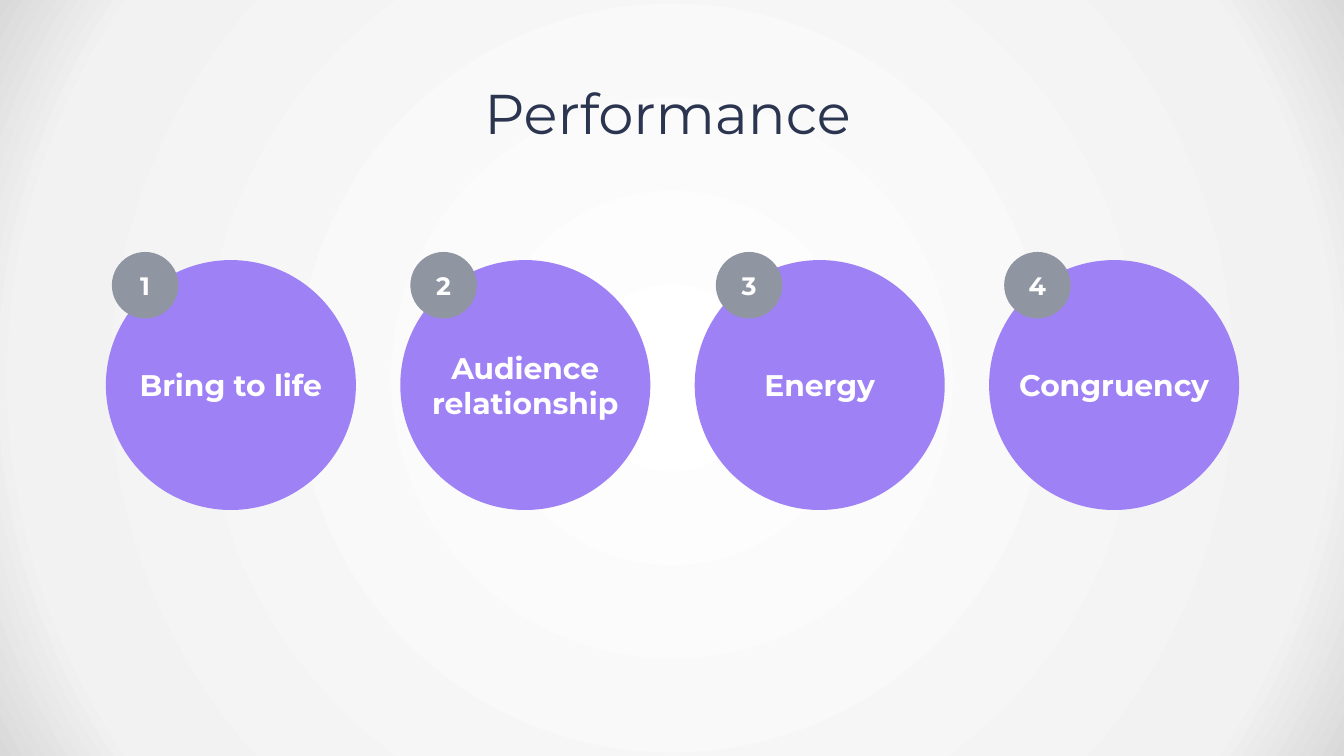
from dataclasses import dataclass

import pptx
import pptx.dml.color
import pptx.enum.shapes
import pptx.enum.text
import pptx.oxml
import pptx.oxml.ns
import pptx.util
from pptx.util import Inches

FONT = "Montserrat"
WHITE = "FFFFFF"
NAVY = "2B354F"
PURPLE = "9F81F6"
GREY = "9095A2"

SLIDE_WIDTH, SLIDE_HEIGHT = 13.33, 7.5
TOPIC_LEFT, TOPIC_TOP, TOPIC_SIZE, TOPIC_STEP = 1.05, 2.58, 2.48, 2.92
BADGE_TOP, BADGE_SIZE = 2.5, 0.66
BACKDROP_STOPS = [(0, WHITE), (85, "F2F2F2"), (100, "D9D9D9")]


@dataclass
class Topic:
    label: str
    badge_left: float


TOPICS = [
    Topic("Bring to life", 1.11),
    Topic("Audience\nrelationship", 4.07),
    Topic("Energy", 7.1),
    Topic("Congruency", 9.96),
]


def color(value: str) -> pptx.dml.color.RGBColor:
    return pptx.dml.color.RGBColor.from_string(value)


def write_text(shape, text: str, size: float, text_color: str, bold: bool,
               wrap: bool, margins: tuple = (0, 0, 0, 0)) -> None:
    frame = shape.text_frame
    frame.text = text
    frame.word_wrap = wrap
    frame.vertical_anchor = pptx.enum.text.MSO_ANCHOR.MIDDLE
    frame.margin_left, frame.margin_top, frame.margin_right, frame.margin_bottom = (
        Inches(margin) for margin in margins
    )
    for paragraph in frame.paragraphs:
        paragraph.alignment = pptx.enum.text.PP_ALIGN.CENTER
        for run in paragraph.runs:
            run.font.name = FONT
            run.font.size = pptx.util.Pt(size)
            run.font.bold = bold
            run.font.color.rgb = color(text_color)


def add_backdrop(slide) -> None:
    shape = slide.shapes.add_shape(
        pptx.enum.shapes.MSO_SHAPE.RECTANGLE,
        0, 0, Inches(SLIDE_WIDTH), Inches(SLIDE_HEIGHT),
    )
    shape.shadow.inherit = False
    shape.line.fill.background()
    shape.fill.gradient()
    stops = "".join(
        f'<a:gs pos="{position * 1000}"><a:srgbClr val="{value}"/></a:gs>'
        for position, value in BACKDROP_STOPS
    )
    radial = pptx.oxml.parse_xml(
        f'<a:gradFill {pptx.oxml.ns.nsdecls("a")} rotWithShape="1">'
        f'<a:gsLst>{stops}</a:gsLst><a:path path="circle">'
        '<a:fillToRect l="50000" t="50000" r="50000" b="50000"/>'
        '</a:path></a:gradFill>'
    )
    properties = shape.element.spPr
    properties.replace(properties.find(pptx.oxml.ns.qn("a:gradFill")), radial)


def add_title(slide, text: str) -> None:
    shape = slide.shapes.add_textbox(0, Inches(0.74), Inches(SLIDE_WIDTH), Inches(0.83))
    write_text(shape, text, 40, NAVY, False, True, (0, 0.04, 0.09, 0.04))
    shape.text_frame.paragraphs[0].line_spacing = 0.9


def add_circle(slide, left: float, top: float, diameter: float, fill: str,
               text: str, size: float, wrap: bool) -> None:
    shape = slide.shapes.add_shape(
        pptx.enum.shapes.MSO_SHAPE.OVAL,
        Inches(left), Inches(top), Inches(diameter), Inches(diameter),
    )
    shape.shadow.inherit = False
    shape.fill.solid()
    shape.fill.fore_color.rgb = color(fill)
    shape.line.fill.background()
    write_text(shape, text, size, WHITE, True, wrap)


def main() -> None:
    presentation = pptx.Presentation()
    presentation.slide_width = Inches(SLIDE_WIDTH)
    presentation.slide_height = Inches(SLIDE_HEIGHT)
    slide = presentation.slides.add_slide(presentation.slide_layouts[6])
    add_backdrop(slide)
    add_title(slide, "Performance")
    for index, topic in enumerate(TOPICS):
        add_circle(slide, TOPIC_LEFT + index * TOPIC_STEP, TOPIC_TOP, TOPIC_SIZE,
                   PURPLE, topic.label, 21.3, False)
    for number, topic in enumerate(TOPICS, start=1):
        add_circle(slide, topic.badge_left, BADGE_TOP, BADGE_SIZE,
                   GREY, str(number), 18, True)
    presentation.save("out.pptx")


if __name__ == "__main__":
    main()
